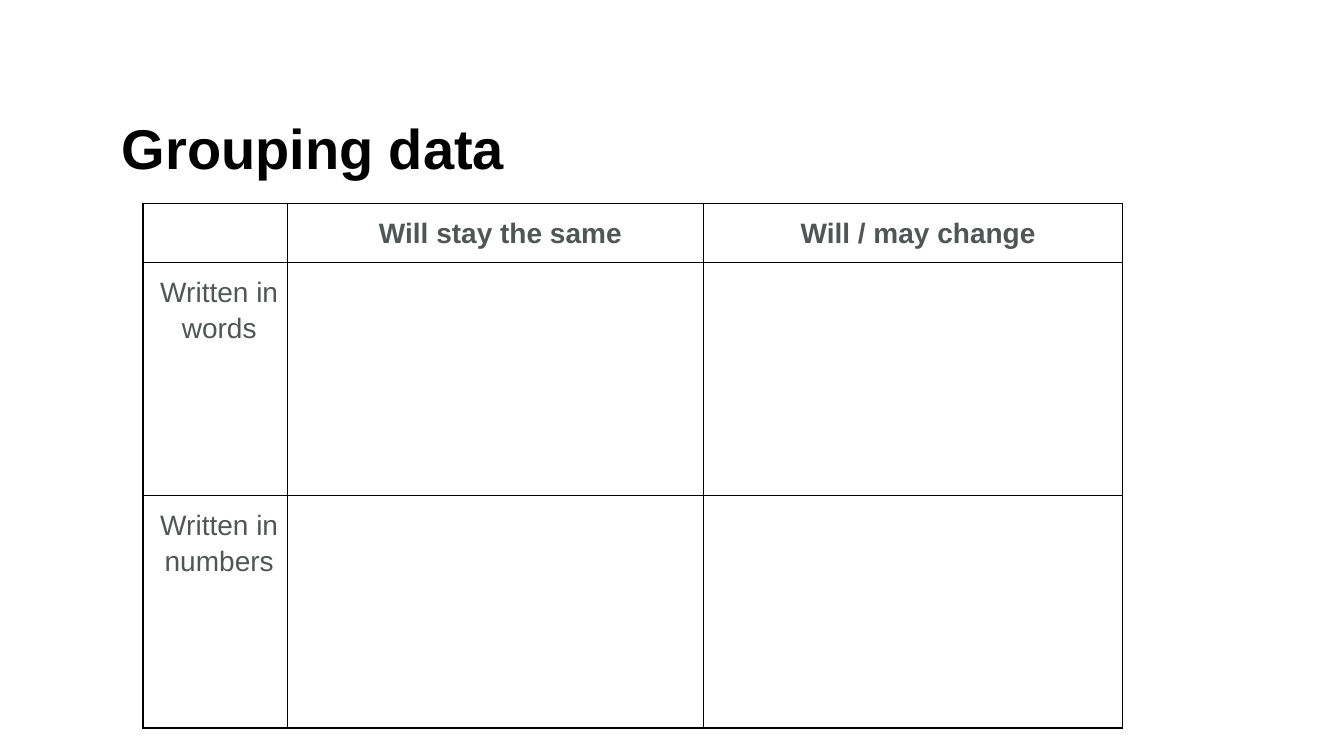
from dataclasses import dataclass

from pptx import Presentation
from pptx.dml.color import RGBColor
from pptx.enum.text import PP_ALIGN
from pptx.oxml.ns import qn
from pptx.util import Pt
from lxml import etree

CENTER = PP_ALIGN.CENTER
BORDER_TAGS = ("a:lnL", "a:lnR", "a:lnT", "a:lnB")


@dataclass(frozen=True)
class Theme:
    font: str = "Arial"
    title_color: str = "000000"
    text_color: str = "505555"
    border_color: str = "000000"
    title_size: float = 40
    text_size: float = 20
    border_width: float = 1


@dataclass(frozen=True)
class Label:
    row: int
    column: int
    text: str
    indent: float
    bold: bool = False


THEME = Theme()
COLUMN_WIDTHS = (103, 297.4, 299.4)
ROW_HEIGHTS = (40, 166.3, 166.3)
LABELS = (
    Label(0, 1, "Will stay the same", 7.2, True),
    Label(0, 2, "Will / may change", 7.2, True),
    Label(1, 0, "Written in words", 5.8),
    Label(2, 0, "Written in numbers", 5.8),
)
CELL_MARGINS = {
    "margin_left": Pt(5),
    "margin_right": Pt(5),
    "margin_top": Pt(7.2),
    "margin_bottom": Pt(7.2),
}


def apply(target, values: dict) -> None:
    for name, value in values.items():
        setattr(target, name, value)


def write(para, text: str, size: float, color: str, bold: bool) -> None:
    span = para.add_run()
    span.text = text
    apply(span.font, {"name": THEME.font, "size": Pt(size), "bold": bold})
    span.font.color.rgb = RGBColor.from_string(color)


def draw_title(page, text: str) -> None:
    box = page.shapes.add_textbox(Pt(79.9), Pt(74.5), Pt(841), Pt(60))
    box.text_frame.word_wrap = True
    para = box.text_frame.paragraphs[0]
    para.line_spacing = 1.07
    write(para, text, THEME.title_size, THEME.title_color, True)


def draw_borders(cell) -> None:
    properties = cell._tc.get_or_add_tcPr()
    for position, tag in enumerate(BORDER_TAGS):
        line = etree.Element(qn(tag), w=str(Pt(THEME.border_width)))
        fill = etree.SubElement(line, qn("a:solidFill"))
        etree.SubElement(fill, qn("a:srgbClr"), val=THEME.border_color)
        properties.insert(position, line)


def draw_table(page) -> None:
    frame = page.shapes.add_table(
        len(ROW_HEIGHTS), len(COLUMN_WIDTHS), Pt(102.2), Pt(145.4),
        Pt(sum(COLUMN_WIDTHS)), Pt(sum(ROW_HEIGHTS)),
    )
    table = frame.table
    apply(table, {"first_row": False, "horz_banding": False})
    for column, width in zip(table.columns, COLUMN_WIDTHS):
        column.width = Pt(width)
    for row, height in zip(table.rows, ROW_HEIGHTS):
        row.height = Pt(height)
    for cell in table.iter_cells():
        apply(cell, CELL_MARGINS)
        cell.fill.background()
        draw_borders(cell)
    for label in LABELS:
        para = table.cell(label.row, label.column).text_frame.paragraphs[0]
        apply(para, {"alignment": CENTER, "line_spacing": 1.15})
        para._p.get_or_add_pPr().set("marL", str(Pt(label.indent)))
        write(para, label.text, THEME.text_size, THEME.text_color, label.bold)


def main() -> None:
    deck = Presentation()
    apply(deck, {"slide_width": Pt(960), "slide_height": Pt(540)})
    page = deck.slides.add_slide(deck.slide_layouts[6])
    draw_title(page, "Grouping data")
    draw_table(page)
    deck.save("out.pptx")


if __name__ == "__main__":
    main()
